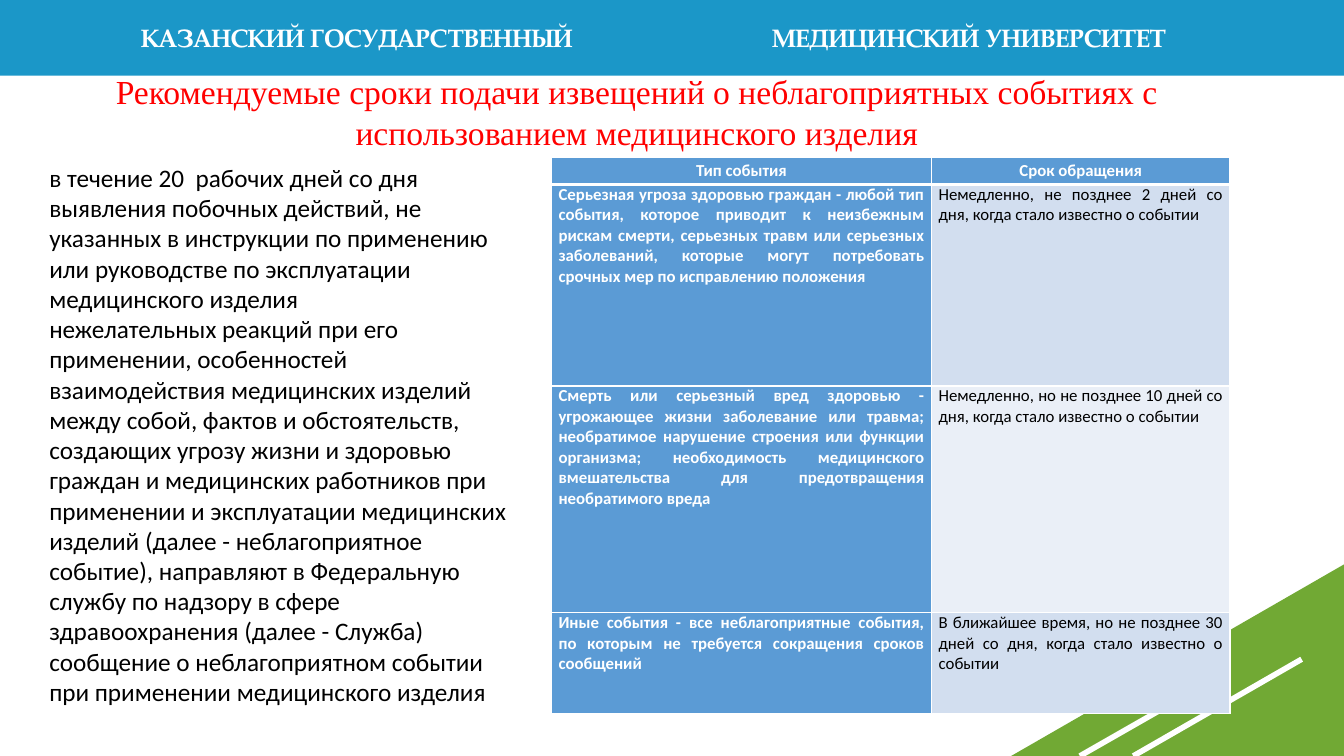
from dataclasses import dataclass
from typing import Optional

from lxml.etree import SubElement
from pptx import Presentation
from pptx.dml.color import RGBColor
from pptx.enum.shapes import MSO_CONNECTOR, MSO_SHAPE
from pptx.enum.text import MSO_ANCHOR, MSO_AUTO_SIZE, PP_ALIGN
from pptx.oxml.ns import qn
from pptx.util import Inches, Pt

HUES = {
    "white": "FFFFFF", "black": "000000", "red": "FF0000", "bar": "1B97C8",
    "green": "71A934", "head": "5B9BD5", "odd": "D2DEEF", "even": "EAEFF7",
}


@dataclass
class Label:
    left: float
    top: float
    width: float
    height: float
    text: str
    size: int
    font: str
    hue: str
    bold: bool = False
    align: Optional[PP_ALIGN] = None
    anchor: MSO_ANCHOR = MSO_ANCHOR.TOP


@dataclass
class Block:
    kind: MSO_SHAPE
    left: float
    top: float
    width: float
    height: float
    hue: str
    flip: bool = False


@dataclass
class Stripe:
    start: tuple[float, float]
    end: tuple[float, float]


@dataclass
class Row:
    event: str
    term: str
    height: float


BLOCKS = [
    Block(MSO_SHAPE.RECTANGLE, 0, 0, 13.33, 0.75, "bar"),
    Block(MSO_SHAPE.RIGHT_TRIANGLE, 10.03, 5.6, 3.3, 1.9, "green", True),
]
STRIPES = [Stripe((10.71, 7.5), (11.76, 6.9)), Stripe((11.24, 7.5), (12.91, 6.54))]
LABELS = [
    Label(0.92, 0.17, 4.86, 0.4, "КАЗАНСКИЙ ГОСУДАРСТВЕННЫЙ", 18,
          "TeX Gyre Pagella", "white", True, PP_ALIGN.RIGHT),
    Label(7.56, 0.17, 4.86, 0.4, "МЕДИЦИНСКИЙ УНИВЕРСИТЕТ", 18,
          "TeX Gyre Pagella", "white", True),
    Label(0.68, 0.65, 11.27, 0.91,
          "Рекомендуемые сроки подачи извещений о неблагоприятных событиях "
          "с использованием медицинского изделия",
          24, "Times New Roman", "red", False, PP_ALIGN.CENTER, MSO_ANCHOR.MIDDLE),
    Label(0.39, 1.56, 4.85, 5.55,
          "в течение 20  рабочих дней со дня выявления побочных действий, не указанных "
          "в инструкции по применению или руководстве по эксплуатации медицинского изделия\n"
          "нежелательных реакций при его применении, особенностей взаимодействия "
          "медицинских изделий между собой, фактов и обстоятельств, создающих угрозу жизни "
          "и здоровью граждан и медицинских работников при применении и эксплуатации "
          "медицинских изделий (далее - неблагоприятное событие), направляют в Федеральную "
          "службу по надзору в сфере здравоохранения (далее - Служба) сообщение о "
          "неблагоприятном событии при применении медицинского изделия",
          18, "Calibri", "black"),
]
COLS = [3.77, 2.96]
ROWS = [
    Row("Тип события", "Срок обращения", 0.27),
    Row("Серьезная угроза здоровью граждан - любой тип события, которое приводит к "
        "неизбежным рискам смерти, серьезных травм или серьезных заболеваний, которые "
        "могут потребовать срочных мер по исправлению положения",
        "Немедленно, не позднее 2 дней со дня, когда стало известно о событии", 2),
    Row("Смерть или серьезный вред здоровью - угрожающее жизни заболевание или травма; "
        "необратимое нарушение строения или функции организма; необходимость "
        "медицинского вмешательства для предотвращения необратимого вреда",
        "Немедленно, но не позднее 10 дней со дня, когда стало известно о событии", 2.25),
    Row("Иные события - все неблагоприятные события, по которым не требуется "
        "сокращения сроков сообщений",
        "В ближайшее время, но не позднее 30 дней со дня, когда стало известно о событии", 1),
]


def tint(name: str) -> RGBColor:
    return RGBColor.from_string(HUES[name])


def style(frame, size: int, font: str, hue: str, bold: bool, align) -> None:
    for para in frame.paragraphs:
        para.alignment = align
        for run in para.runs:
            run.font.size = Pt(size)
            run.font.name = font
            run.font.bold = bold
            run.font.color.rgb = tint(hue)


def add_block(slide, block: Block) -> None:
    shape = slide.shapes.add_shape(
        block.kind, Inches(block.left), Inches(block.top),
        Inches(block.width), Inches(block.height))
    shape.shadow.inherit = False
    shape.fill.solid()
    shape.fill.fore_color.rgb = tint(block.hue)
    shape.line.fill.background()
    if block.flip:
        shape.element.spPr.find(qn("a:xfrm")).set("flipH", "1")


def add_stripe(slide, stripe: Stripe) -> None:
    points = [Inches(v) for v in (*stripe.start, *stripe.end)]
    line = slide.shapes.add_connector(MSO_CONNECTOR.STRAIGHT, *points)
    line.line.color.rgb = tint("white")
    line.line.width = Pt(4)
    SubElement(line.element.spPr, qn("a:effectLst"))


def add_label(slide, label: Label) -> None:
    box = slide.shapes.add_textbox(
        Inches(label.left), Inches(label.top), Inches(label.width), Inches(label.height))
    frame = box.text_frame
    frame.word_wrap = True
    frame.auto_size = MSO_AUTO_SIZE.SHAPE_TO_FIT_TEXT
    frame.vertical_anchor = label.anchor
    frame.text = label.text
    style(frame, label.size, label.font, label.hue, label.bold, label.align)


def add_edges(cell, top: int, base: int) -> None:
    props = cell._tc.get_or_add_tcPr()
    for side, width in (("L", 1), ("R", 1), ("T", top), ("B", base)):
        edge = SubElement(props, qn(f"a:ln{side}"), w=str(Pt(width)))
        SubElement(SubElement(edge, qn("a:solidFill")), qn("a:srgbClr"), val=HUES["white"])


def fill_cell(cell, text: str, row: int, col: int) -> None:
    head = row == 0
    strong = head or col == 0
    add_edges(cell, 3 if row == 1 else 1, 3 if head else 1)
    cell.fill.solid()
    cell.fill.fore_color.rgb = tint("head" if strong else "odd" if row % 2 else "even")
    cell.margin_left = cell.margin_right = Inches(0.07)
    cell.margin_top = cell.margin_bottom = 0
    cell.text_frame.text = text
    style(cell.text_frame, 12, "Calibri", "white" if strong else "black", strong,
          PP_ALIGN.CENTER if head else PP_ALIGN.JUSTIFY)
    if head:
        para = cell.text_frame.paragraphs[0]
        para.line_spacing = 1.15
        para.space_after = Pt(10)


def add_terms(slide) -> None:
    table = slide.shapes.add_table(
        len(ROWS), len(COLS), Inches(5.47), Inches(1.56), Inches(sum(COLS)),
        Inches(sum(row.height for row in ROWS))).table
    for col, width in enumerate(COLS):
        table.columns[col].width = Inches(width)
    for num, row in enumerate(ROWS):
        table.rows[num].height = Inches(row.height)
        for col, text in enumerate((row.event, row.term)):
            fill_cell(table.cell(num, col), text, num, col)


def main() -> None:
    """Build the slide on deadlines for reporting adverse events."""
    deck = Presentation()
    deck.slide_width, deck.slide_height = Inches(13.33), Inches(7.5)
    slide = deck.slides.add_slide(deck.slide_layouts[6])
    for block in BLOCKS:
        add_block(slide, block)
    for stripe in STRIPES:
        add_stripe(slide, stripe)
    add_terms(slide)
    for label in LABELS:
        add_label(slide, label)
    deck.save("out.pptx")


if __name__ == "__main__":
    main()
